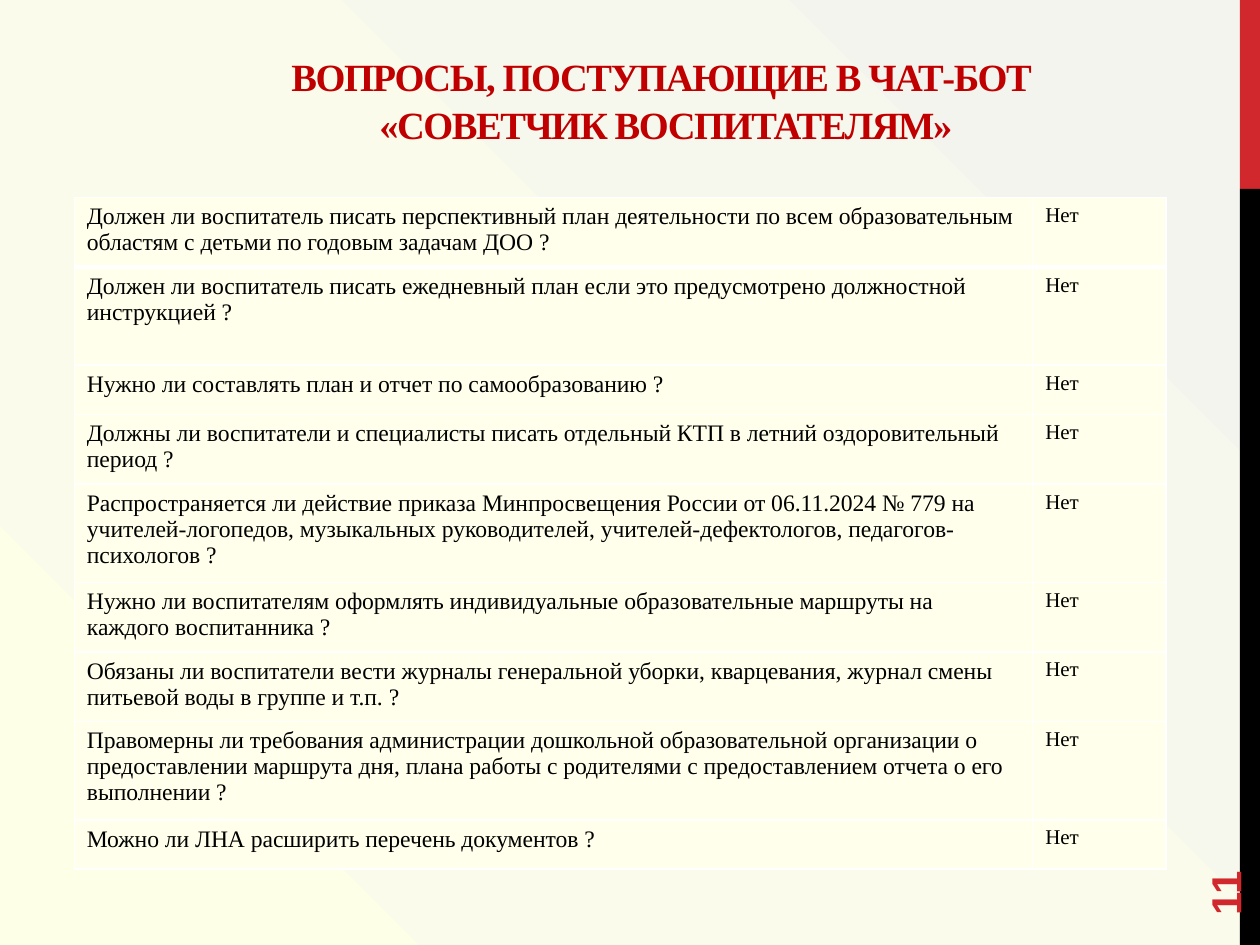
import dataclasses

import pptx
import pptx.dml.color
import pptx.enum.shapes
import pptx.enum.text
import pptx.oxml
import pptx.oxml.ns
import pptx.util

Pt = pptx.util.Pt


@dataclasses.dataclass(frozen=True)
class Theme:
    red: str = "D1282E"
    black: str = "000000"
    title_red: str = "C00000"
    cell: str = "FFFFEB"
    border: str = "FFFFFF"
    gradient: tuple = ((0, "FDFFE7"), (38, "FAFBEA"), (99, "F4F4EF"))
    serif: str = "Times New Roman"
    sans: str = "Arial"
    title_size: float = 22
    question_size: float = 13.5
    answer_size: float = 12
    number_size: float = 24


THEME = Theme()

TITLE = ("ВОПРОСЫ, ПОСТУПАЮЩИЕ В ЧАТ-БОТ", " «СОВЕТЧИК ВОСПИТАТЕЛЯМ»")
ANSWER = "Нет"

# Row heights in points, by the number of text lines they hold
ONE, TWO, THREE = 28.2, 39.8, 56.1
QUESTIONS = (
    (TWO, "Должен ли воспитатель писать перспективный план деятельности по всем "
          "образовательным областям с детьми по годовым задачам ДОО ?"),
    (THREE, "Должен ли воспитатель писать ежедневный план если это предусмотрено "
            "должностной инструкцией ?"),
    (ONE, "Нужно ли составлять план и отчет по самообразованию ?"),
    (TWO, "Должны ли воспитатели и специалисты писать отдельный КТП в летний "
          "оздоровительный период ?"),
    (THREE, "Распространяется ли действие приказа Минпросвещения России от 06.11.2024 "
            "№ 779 на учителей-логопедов, музыкальных руководителей, "
            "учителей-дефектологов, педагогов-психологов ?"),
    (TWO, "Нужно ли воспитателям оформлять индивидуальные образовательные маршруты "
          "на каждого воспитанника ?"),
    (TWO, "Обязаны ли воспитатели вести журналы генеральной уборки, кварцевания, "
          "журнал смены питьевой воды в группе и т.п. ?"),
    (THREE, "Правомерны ли требования администрации дошкольной образовательной "
            "организации о предоставлении маршрута дня, плана работы с родителями "
            "с предоставлением отчета о его выполнении ?"),
    (ONE, "Можно ли ЛНА расширить перечень документов ?"),
)


def color(value):
    return pptx.dml.color.RGBColor.from_string(value)


def style_run(run, font_name, size, text_color, bold=False):
    run.font.name = font_name
    run.font.size = Pt(size)
    run.font.bold = bold
    run.font.color.rgb = color(text_color)


def set_background(slide):
    fill = slide.background.fill
    fill.gradient()
    old_gradient = slide.background._cSld.find(".//" + pptx.oxml.ns.qn("a:gradFill"))
    stops = "".join(
        f'<a:gs pos="{position * 1000}"><a:srgbClr val="{value}"/></a:gs>'
        for position, value in THEME.gradient
    )
    gradient = pptx.oxml.parse_xml(
        f'<a:gradFill {pptx.oxml.ns.nsdecls("a")} rotWithShape="1">'
        f'<a:gsLst>{stops}</a:gsLst><a:path path="circle">'
        '<a:fillToRect l="0" t="100000" r="100000" b="0"/></a:path></a:gradFill>'
    )
    old_gradient.getparent().replace(old_gradient, gradient)


def add_bar(slide, top, height, fill_color):
    shape = slide.shapes.add_shape(
        pptx.enum.shapes.MSO_SHAPE.RECTANGLE, Pt(708.5), Pt(top), Pt(11.5), Pt(height)
    )
    shape.shadow.inherit = False
    shape.fill.solid()
    shape.fill.fore_color.rgb = color(fill_color)
    shape.line.fill.background()


def add_text_box(slide, left, top, width, height):
    shape = slide.shapes.add_textbox(Pt(left), Pt(top), Pt(width), Pt(height))
    shape.text_frame.word_wrap = True
    return shape


def add_page_number(slide, number):
    shape = add_text_box(slide, 648, 463.7, 103.7, 28.8)
    shape.rotation = 270
    text_frame = shape.text_frame
    text_frame.vertical_anchor = pptx.enum.text.MSO_ANCHOR.MIDDLE
    text_frame.text = number
    style_run(text_frame.paragraphs[0].runs[0], THEME.sans, THEME.number_size,
              THEME.red, bold=True)


def add_title(slide):
    text_frame = add_text_box(slide, 70.6, 15.1, 607, 69.8).text_frame
    text_frame.margin_left = text_frame.margin_right = text_frame.margin_bottom = 0
    text_frame.margin_top = Pt(15.1)
    text_frame.text = "\n".join(TITLE)
    for paragraph in text_frame.paragraphs:
        paragraph.alignment = pptx.enum.text.PP_ALIGN.CENTER
        paragraph.space_before = Pt(1)
        paragraph._p.get_or_add_pPr().set("marL", str(Pt(8)))
        run = paragraph.runs[0]
        style_run(run, THEME.serif, THEME.title_size, THEME.title_red, bold=True)
        run.font._element.set("spc", "-80")


def set_borders(cell, top, bottom):
    properties = cell._tc.get_or_add_tcPr()
    widths = {"lnL": 1, "lnR": 1, "lnT": top, "lnB": bottom}
    for index, (side, width) in enumerate(widths.items()):
        line = pptx.oxml.parse_xml(
            f'<a:{side} {pptx.oxml.ns.nsdecls("a")} w="{Pt(width)}"><a:solidFill>'
            f'<a:srgbClr val="{THEME.border}"/></a:solidFill></a:{side}>'
        )
        properties.insert(index, line)


def fill_cell(cell, text, size, top, bottom):
    cell.text_frame.text = text
    style_run(cell.text_frame.paragraphs[0].runs[0], THEME.serif, size, THEME.black)
    cell.fill.solid()
    cell.fill.fore_color.rgb = color(THEME.cell)
    set_borders(cell, top, bottom)


def add_question_table(slide):
    widths = (547.6, 76.2)
    total_height = sum(height for height, _ in QUESTIONS)
    table = slide.shapes.add_table(
        len(QUESTIONS), len(widths), Pt(42.5), Pt(112.8), Pt(sum(widths)), Pt(total_height)
    ).table
    for column, width in zip(table.columns, widths):
        column.width = Pt(width)
    for index, (height, question) in enumerate(QUESTIONS):
        table.rows[index].height = Pt(height)
        # A thick rule separates the first row from the rest
        top = 3 if index == 1 else 1
        bottom = 3 if index == 0 else 1
        fill_cell(table.cell(index, 0), question, THEME.question_size, top, bottom)
        fill_cell(table.cell(index, 1), ANSWER, THEME.answer_size, top, bottom)


def main():
    presentation = pptx.Presentation()
    presentation.slide_width = Pt(720)
    presentation.slide_height = Pt(540)
    slide = presentation.slides.add_slide(presentation.slide_layouts[6])

    # Background and side bars
    set_background(slide)
    add_bar(slide, 0, 108, THEME.red)
    add_bar(slide, 108, 432, THEME.black)

    # Content
    add_page_number(slide, "11")
    add_title(slide)
    add_question_table(slide)

    presentation.save("out.pptx")


if __name__ == "__main__":
    main()
